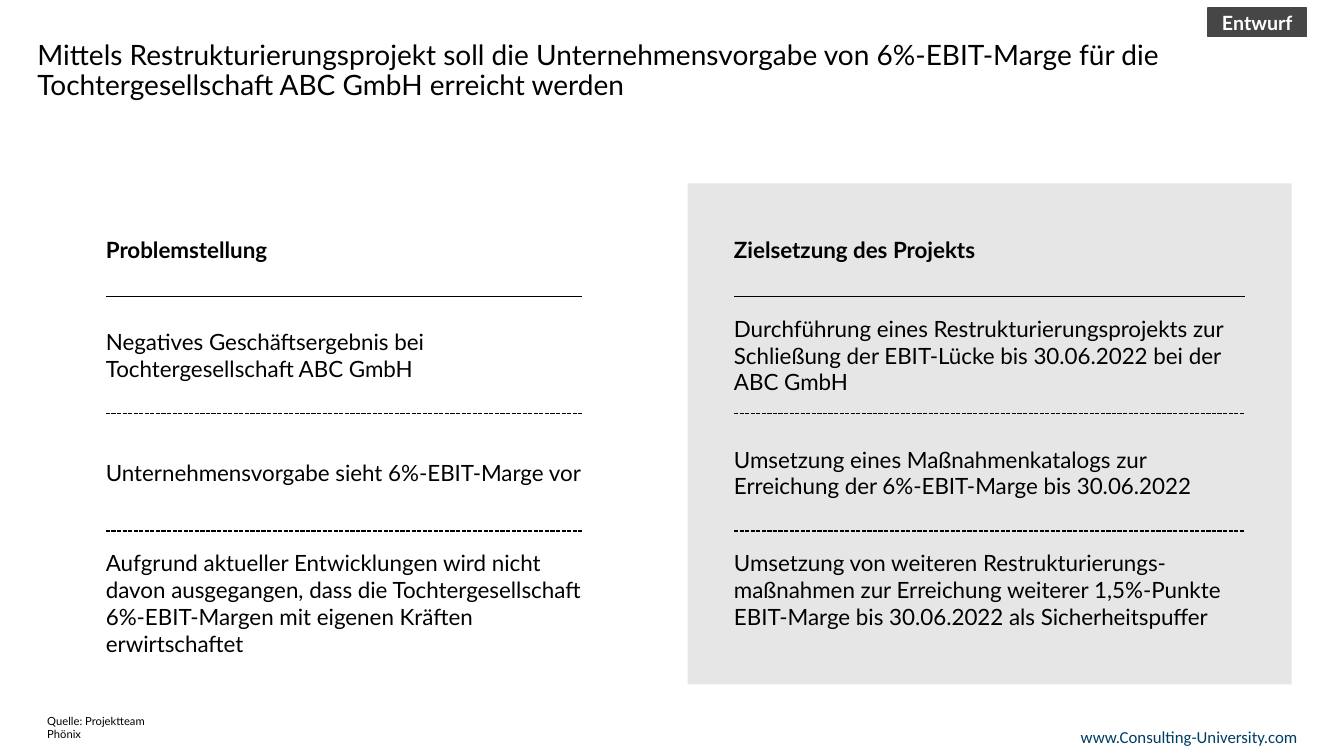
from lxml import etree
from pptx import Presentation
from pptx.dml.color import RGBColor
from pptx.enum.dml import MSO_LINE
from pptx.enum.shapes import MSO_CONNECTOR, MSO_SHAPE
from pptx.enum.text import MSO_ANCHOR, PP_ALIGN
from pptx.oxml.ns import qn
from pptx.util import Inches, Pt

BLACK = RGBColor(0x00, 0x00, 0x00)
WHITE = RGBColor(0xFF, 0xFF, 0xFF)
PANEL_GREY = RGBColor(0xE6, 0xE6, 0xE6)
TAG_GREY = RGBColor(0x46, 0x46, 0x46)
LINK_BLUE = RGBColor(0x00, 0x3D, 0x66)
LEFT, CENTER, RIGHT = PP_ALIGN.LEFT, PP_ALIGN.CENTER, PP_ALIGN.RIGHT
TOP, MIDDLE, BOTTOM = MSO_ANCHOR.TOP, MSO_ANCHOR.MIDDLE, MSO_ANCHOR.BOTTOM
RECTANGLE, STRAIGHT = MSO_SHAPE.RECTANGLE, MSO_CONNECTOR.STRAIGHT
DASH = MSO_LINE.SQUARE_DOT

# Grid in inches: one rule above each row of statements
FIRST_RULE = 2.94
ROW_HEIGHT = 1.165
HEADING_TOP, HEADING_HEIGHT = 2.29, 0.32
LAST_ROW_GAP = 0.18
INSETS = (0.1, 0.05, 0.1, 0.05)

# Heading, left edge, width and statements of each column
COLUMNS = [
    ("Problemstellung", 1.05, 4.72, [
        "Negatives Geschäftsergebnis bei Tochtergesellschaft ABC GmbH",
        "Unternehmensvorgabe sieht 6%-EBIT-Marge vor",
        "Aufgrund aktueller Entwicklungen wird nicht davon ausgegangen, dass die "
        "Tochtergesellschaft 6%-EBIT-Margen mit eigenen Kräften erwirtschaftet",
    ]),
    ("Zielsetzung des Projekts", 7.28, 5.07, [
        "Durchführung eines Restrukturierungsprojekts zur Schließung der "
        "EBIT-Lücke bis 30.06.2022 bei der ABC GmbH",
        "Umsetzung eines Maßnahmenkatalogs zur Erreichung der 6%-EBIT-Marge "
        "bis 30.06.2022",
        "Umsetzung von weiteren Restrukturierungs-maßnahmen zur Erreichung "
        "weiterer 1,5%-Punkte EBIT-Marge bis 30.06.2022 als Sicherheitspuffer",
    ]),
]


def write(shape, text, size=16, font="Lato", color=BLACK, bold=False, align=LEFT,
          anchor=MIDDLE, insets=(0, 0, 0, 0), spacing=None):
    frame = shape.text_frame
    frame.word_wrap = True
    frame.vertical_anchor = anchor
    (frame.margin_left, frame.margin_top,
     frame.margin_right, frame.margin_bottom) = map(Inches, insets)
    para = frame.paragraphs[0]
    para.alignment = align
    if spacing:
        para.line_spacing = spacing
    span = para.add_run()
    span.text = text
    span.font.size = Pt(size)
    span.font.name = font
    span.font.bold = bold
    span.font.color.rgb = color


def add_text(page, area, text, **style):
    box = page.shapes.add_textbox(*map(Inches, area))
    write(box, text, **style)


def add_block(page, area, fill, outlined=False):
    block = page.shapes.add_shape(RECTANGLE, *map(Inches, area))
    block.shadow.inherit = False
    block.fill.solid()
    block.fill.fore_color.rgb = fill
    if outlined:
        block.line.color.rgb = fill
        block.line.width = Pt(1)
    else:
        block.line.fill.background()
    return block


def add_rule(page, left, top, width, dash=None):
    rule = page.shapes.add_connector(
        STRAIGHT, *map(Inches, (left, top, left + width, top)))
    rule.line.color.rgb = BLACK
    rule.line.width = Pt(1)
    if dash:
        rule.line.dash_style = dash
    etree.SubElement(rule.element.spPr, qn("a:effectLst"))


def add_column(page, heading, left, width, statements):
    add_text(page, (left, HEADING_TOP, width, HEADING_HEIGHT), heading,
             bold=True, insets=(0, 0.05, 0, 0))
    for row, statement in enumerate(statements):
        top = FIRST_RULE + row * ROW_HEIGHT
        add_rule(page, left, top, width, dash=DASH if row else None)
        if row < len(statements) - 1:
            add_text(page, (left, top, width, ROW_HEIGHT), statement)
        else:
            add_text(page, (left, top + LAST_ROW_GAP, width, 1.08), statement,
                     anchor=TOP)


def main():
    deck = Presentation()
    deck.slide_width, deck.slide_height = Inches(13.33), Inches(7.5)
    page = deck.slides.add_slide(deck.slide_layouts[6])

    # Title and draft tag
    add_text(page, (0.37, 0.36, 12.6, 0.59),
             "Mittels Restrukturierungsprojekt soll die Unternehmensvorgabe von "
             "6%-EBIT-Marge für die Tochtergesellschaft ABC GmbH erreicht werden",
             size=20, anchor=TOP, insets=(0, 0.05, 0, 0.05), spacing=0.9)
    tag = add_block(page, (11.98, 0.08, 0.98, 0.28), TAG_GREY, outlined=True)
    write(tag, "Entwurf", size=14, color=WHITE, bold=True, align=CENTER,
          insets=INSETS)

    # Problem and goal columns, the goal on a grey panel
    add_block(page, (6.82, 1.82, 5.99, 4.97), PANEL_GREY)
    for column in COLUMNS:
        add_column(page, *column)

    # Footer
    add_text(page, (0.37, 7.16, 1.5, 0.24), "Quelle: Projektteam Phönix",
             size=8, anchor=BOTTOM, insets=INSETS)
    add_text(page, (9.57, 7.16, 3.4, 0.3), "www.Consulting-University.com",
             size=12, font="Calibri", color=LINK_BLUE, align=RIGHT, insets=INSETS)

    deck.save("out.pptx")


if __name__ == "__main__":
    main()
